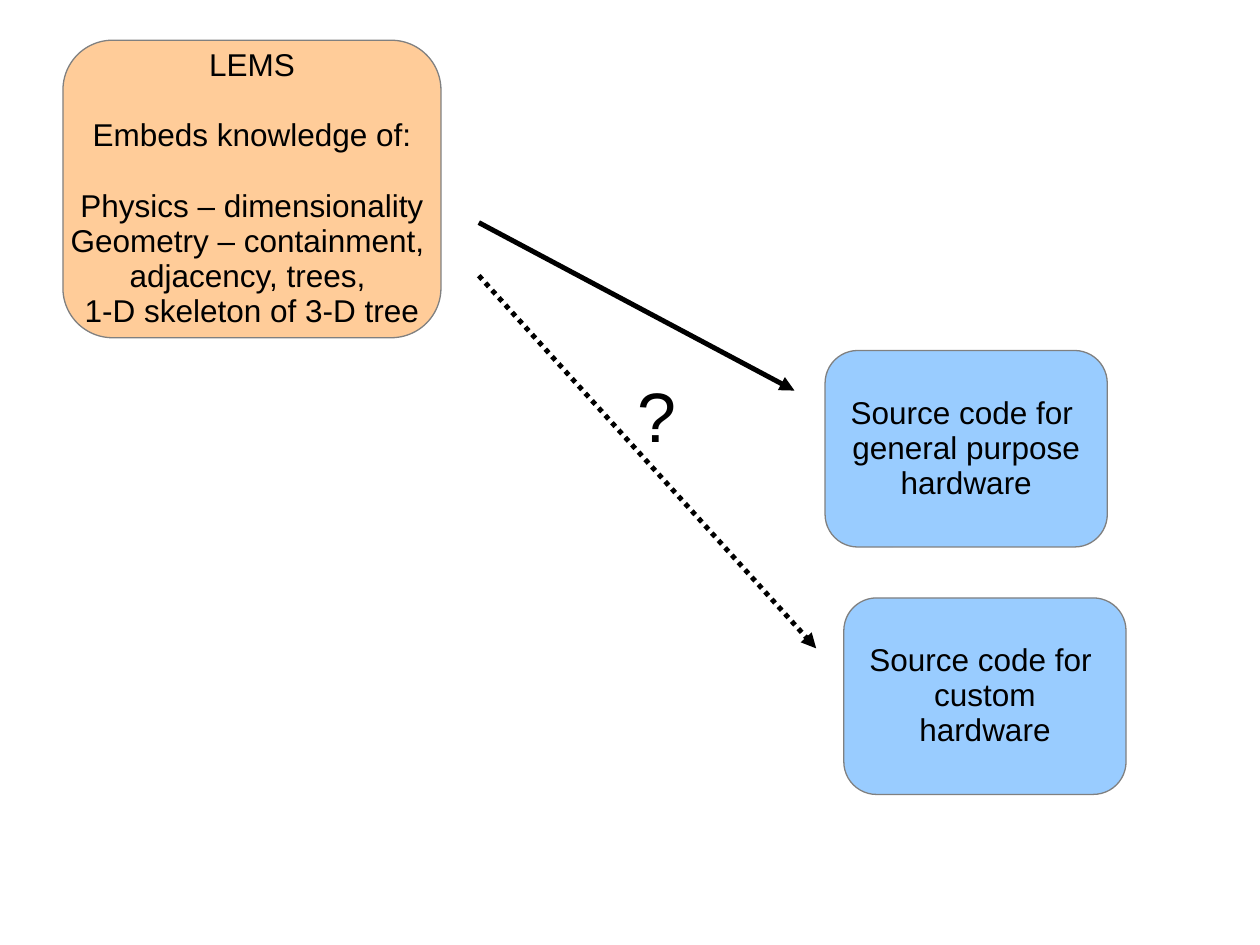
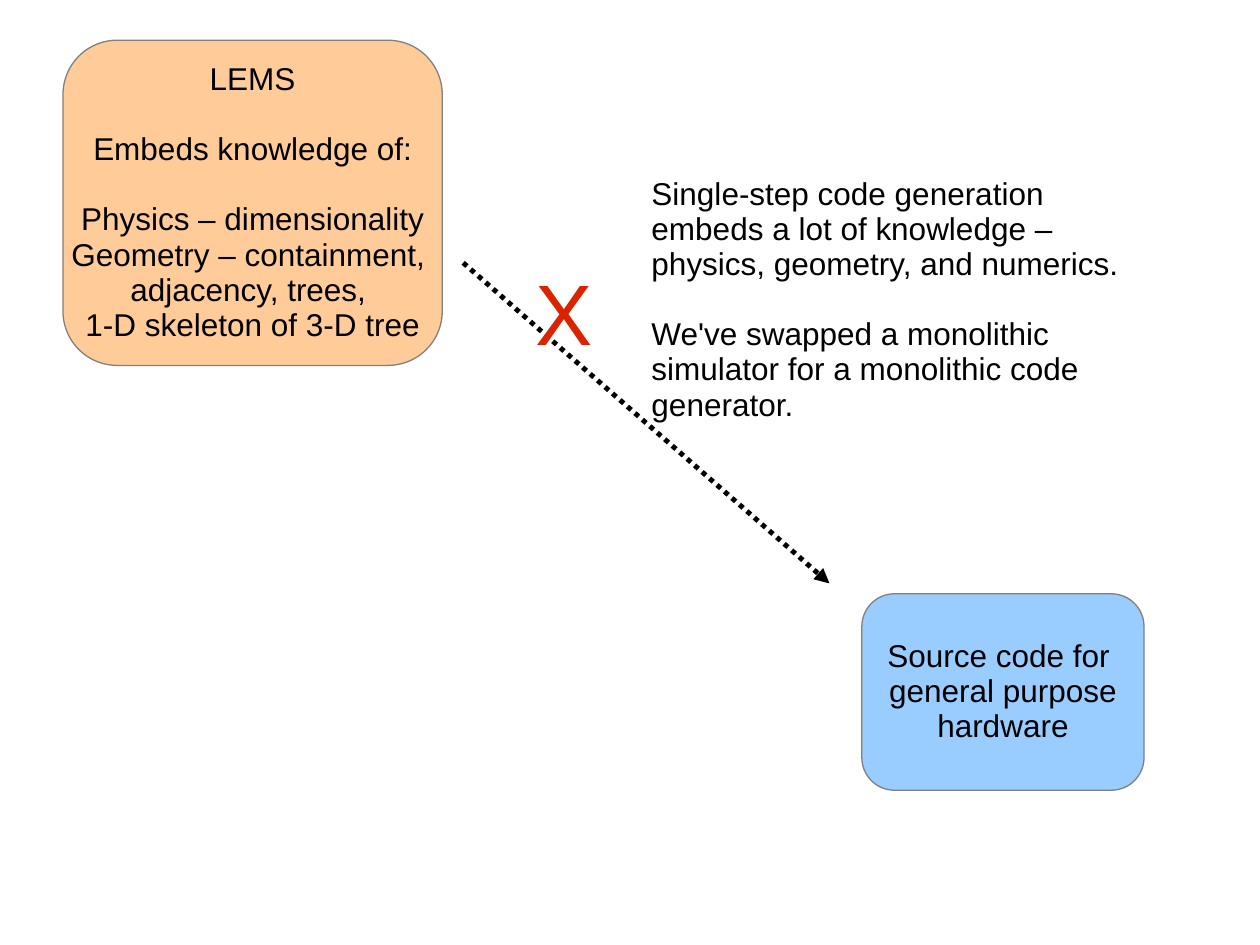
from lxml import etree
from pptx import Presentation
from pptx.dml.color import RGBColor
from pptx.enum import dml, shapes, text
from pptx.oxml import ns
from pptx.util import Pt

PEACH = RGBColor(0xFF, 0xCC, 0x99)
SKY = RGBColor(0x99, 0xCC, 0xFF)
GREY = RGBColor(0x80, 0x80, 0x80)
BLACK = RGBColor(0, 0, 0)
RED = RGBColor(0xDC, 0x23, 0x00)

FONT = "Arial"
BODY_SIZE = 18
SECTION_GAP = 20.1
LEMS_CORNER = (36, 23)
CODE_SIZE = (161.3, 112.3)

LEMS = [
    ["LEMS"],
    ["Embeds knowledge of:"],
    ["Physics – dimensionality", "Geometry – containment, ",
     "adjacency, trees, ", "1-D skeleton of 3-D tree"],
]
GENERAL = [["Source code for ", "general purpose", "hardware"]]
CUSTOM = [["Source code for ", "custom", "hardware"]]
CRITIQUE = [
    ["Single-step code generation embeds a lot of knowledge – "
     "physics, geometry, and numerics."],
    ["We've swapped a monolithic simulator for a monolithic code generator."],
]

SLIDES = [
    {
        "lems_size": (216, 170),
        "code": [(CUSTOM, (482.2, 341.7)), (GENERAL, (471.5, 200.3))],
        "arrows": [((273.6, 127.2), (454, 223.2), False),
                   ((273.6, 157.5), (466.4, 370.5), True)],
        "notes": [([["?"]], (357.8, 213.8, 35.3, 56.9), 40, BLACK, False)],
    },
    {
        "lems_size": (216.7, 185.8),
        "code": [(GENERAL, (492.5, 339.3))],
        "arrows": [((264.7, 150.2), (474, 333.4), True)],
        "notes": [([["X"]], (299.5, 150.5, 45.4, 61.2), 49, RED, False),
                  (CRITIQUE, (365.8, 97.9, 297.4, 115.9), BODY_SIZE, BLACK, True)],
    },
]


def write(frame, sections, size=BODY_SIZE, color=BLACK, align=text.PP_ALIGN.LEFT, wrap=False):
    """Fill a frame with sections of lines, spacing the sections apart."""
    frame.word_wrap = wrap
    frame.margin_left = frame.margin_right = Pt(6.5)
    frame.margin_top = frame.margin_bottom = Pt(3.2)
    frame.text = "\n".join(line for section in sections for line in section)
    starts = {sum(map(len, sections[:i])) for i in range(1, len(sections))}
    for index, paragraph in enumerate(frame.paragraphs):
        paragraph.alignment = align
        paragraph.line_spacing = 0.93
        if index in starts:
            paragraph.space_before = Pt(SECTION_GAP)
        for run in paragraph.runs:
            run.font.name = FONT
            run.font.size = Pt(size)
            run.font.color.rgb = color


def add_box(slide, sections, corner, size, fill):
    """Add a rounded box with centred text."""
    box = slide.shapes.add_shape(shapes.MSO_SHAPE.ROUNDED_RECTANGLE, *map(Pt, corner + size))
    box.shadow.inherit = False
    box.fill.solid()
    box.fill.fore_color.rgb = fill
    box.line.color.rgb = GREY
    box.line.width = Pt(0.75)
    write(box.text_frame, sections, align=text.PP_ALIGN.CENTER)
    box.text_frame.vertical_anchor = text.MSO_ANCHOR.MIDDLE


def add_arrow(slide, start, end, dotted):
    """Add a black arrow, solid or dotted."""
    arrow = slide.shapes.add_connector(shapes.MSO_CONNECTOR.STRAIGHT, *map(Pt, start + end))
    arrow.line.color.rgb = BLACK
    arrow.line.width = Pt(2.83)
    if dotted:
        arrow.line.dash_style = dml.MSO_LINE.ROUND_DOT
    properties = arrow.line._get_or_add_ln()
    etree.SubElement(properties, ns.qn("a:tailEnd"), type="triangle")
    etree.SubElement(properties.getparent(), ns.qn("a:effectLst"))


def add_note(slide, sections, place, size, color, wrap):
    """Add free-standing text."""
    note = slide.shapes.add_textbox(*map(Pt, place))
    write(note.text_frame, sections, size, color, wrap=wrap)


def main():
    """Build both slides and save them."""
    deck = Presentation()
    deck.slide_width, deck.slide_height = Pt(720), Pt(540)
    for content in SLIDES:
        slide = deck.slides.add_slide(deck.slide_layouts[6])
        add_box(slide, LEMS, LEMS_CORNER, content["lems_size"], PEACH)
        for sections, corner in content["code"]:
            add_box(slide, sections, corner, CODE_SIZE, SKY)
        for arrow in content["arrows"]:
            add_arrow(slide, *arrow)
        for note in content["notes"]:
            add_note(slide, *note)
    deck.save("out.pptx")


if __name__ == "__main__":
    main()
